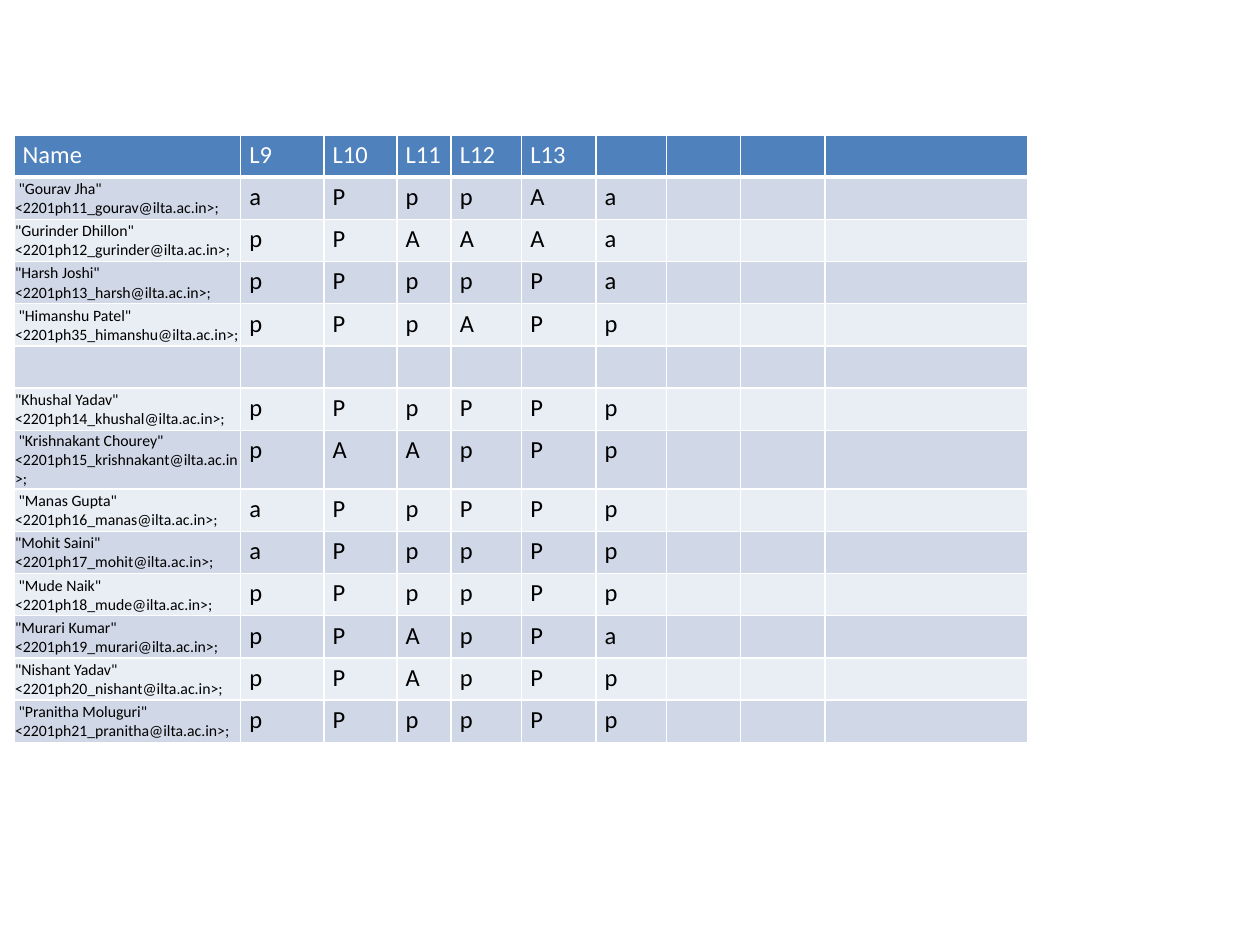
from typing import NamedTuple

from lxml.etree import SubElement as Sub
from pptx import Presentation
from pptx.dml.color import RGBColor as Rgb
from pptx.enum.text import MSO_ANCHOR as Anchor
from pptx.oxml.ns import qn
from pptx.util import Inches, Pt

INK = {"head": "4F81BD", "dark": "D0D8E8", "light": "E9EDF4",
       "white": "FFFFFF", "black": "000000"}
FONT = "Calibri"
HOST = "ilta.ac.in"

LEFT, TOP, HIGH = 0.11, 1.07, 4.82
COLS = [1.8, 0.66, 0.58, 0.43, 0.56, 0.59, 0.56, 0.59, 0.67, 1.61]
HEADS = ["Name", "L9", "L10", "L11", "L12", "L13"]
TALL_ROW, TALL = 7, 0.46


class Pupil(NamedTuple):
    name: str
    roll: int
    marks: str
    pad: str = ""

    def label(self) -> str:
        user = self.name.split()[0].lower()
        return f'{self.pad}"{self.name}" <2201ph{self.roll}_{user}@{HOST}>;'


class Look(NamedTuple):
    size: float
    ink: str
    inset: tuple[float, float, float, float]  # left, top, right, bottom
    anchor: Anchor = Anchor.TOP


WIDE = (0.07, 0.04, 0.07, 0.04)
HEAD = Look(14, "white", WIDE)
MARK = Look(14, "black", WIDE)
NAME = Look(9, "black", (0.01, 0.01, 0.01, 0), Anchor.MIDDLE)

# None is the blank row between the two groups
PUPILS = [
    Pupil("Gourav Jha", 11, "aPppAa", " "),
    Pupil("Gurinder Dhillon", 12, "pPAAAa"),
    Pupil("Harsh Joshi", 13, "pPppPa"),
    Pupil("Himanshu Patel", 35, "pPpAPp", " "),
    None,
    Pupil("Khushal Yadav", 14, "pPpPPp"),
    Pupil("Krishnakant Chourey", 15, "pAApPp", " "),
    Pupil("Manas Gupta", 16, "aPpPPp", " "),
    Pupil("Mohit Saini", 17, "aPppPp"),
    Pupil("Mude Naik", 18, "pPppPp", " "),
    Pupil("Murari Kumar", 19, "pPApPa"),
    Pupil("Nishant Yadav", 20, "pPApPp"),
    Pupil("Pranitha Moluguri", 21, "pPppPp", " "),
]


def edge(cell, base: float) -> None:
    """Draw white cell borders; base is the bottom width in points."""
    props = cell._tc.get_or_add_tcPr()
    for side, width in zip("LRTB", (1, 1, 1, base)):
        line = Sub(props, qn(f"a:ln{side}"), w=str(Pt(width)))
        fill = Sub(line, qn("a:solidFill"))
        Sub(fill, qn("a:srgbClr"), val=INK["white"])


def write(cell, text: str, look: Look) -> None:
    (cell.margin_left, cell.margin_top,
     cell.margin_right, cell.margin_bottom) = map(Inches, look.inset)
    cell.vertical_anchor = look.anchor
    para = cell.text_frame.paragraphs[0]
    font = para.font
    font.name, font.size, font.bold = FONT, Pt(look.size), False
    font.color.rgb = Rgb.from_string(INK[look.ink])
    if text:
        para.add_run().text = text
    else:  # an empty line takes its height from the end mark
        Sub(para._p, qn("a:endParaRPr"), sz=str(look.size * 100))


def fill_row(table, row: int, texts: list[str], first: Look, rest: Look,
             tint: str, base: float = 1) -> None:
    for col in range(len(COLS)):
        cell = table.cell(row, col)
        text = texts[col] if col < len(texts) else ""
        edge(cell, base)
        cell.fill.solid()
        cell.fill.fore_color.rgb = Rgb.from_string(INK[tint])
        write(cell, text, rest if col or not text else first)


def main() -> None:
    deck = Presentation()
    deck.slide_width, deck.slide_height = Inches(10), Inches(7.5)
    slide = deck.slides.add_slide(deck.slide_layouts[6])

    # Table grid
    count = len(PUPILS) + 1
    table = slide.shapes.add_table(
        count, len(COLS), Inches(LEFT), Inches(TOP),
        Inches(sum(COLS)), Inches(HIGH)).table
    table.first_row = table.horz_banding = False
    for col, width in zip(table.columns, COLS):
        col.width = Inches(width)
    for i, row in enumerate(table.rows):
        row.height = Inches(TALL if i == TALL_ROW
                            else (HIGH - TALL) / (count - 1))

    # Header, then one banded row for each pupil
    fill_row(table, 0, HEADS, HEAD, HEAD, "head", 3)
    for i, pupil in enumerate(PUPILS, 1):
        texts = [pupil.label(), *pupil.marks] if pupil else []
        fill_row(table, i, texts, NAME, MARK, "dark" if i % 2 else "light")

    deck.save("out.pptx")


if __name__ == "__main__":
    main()
